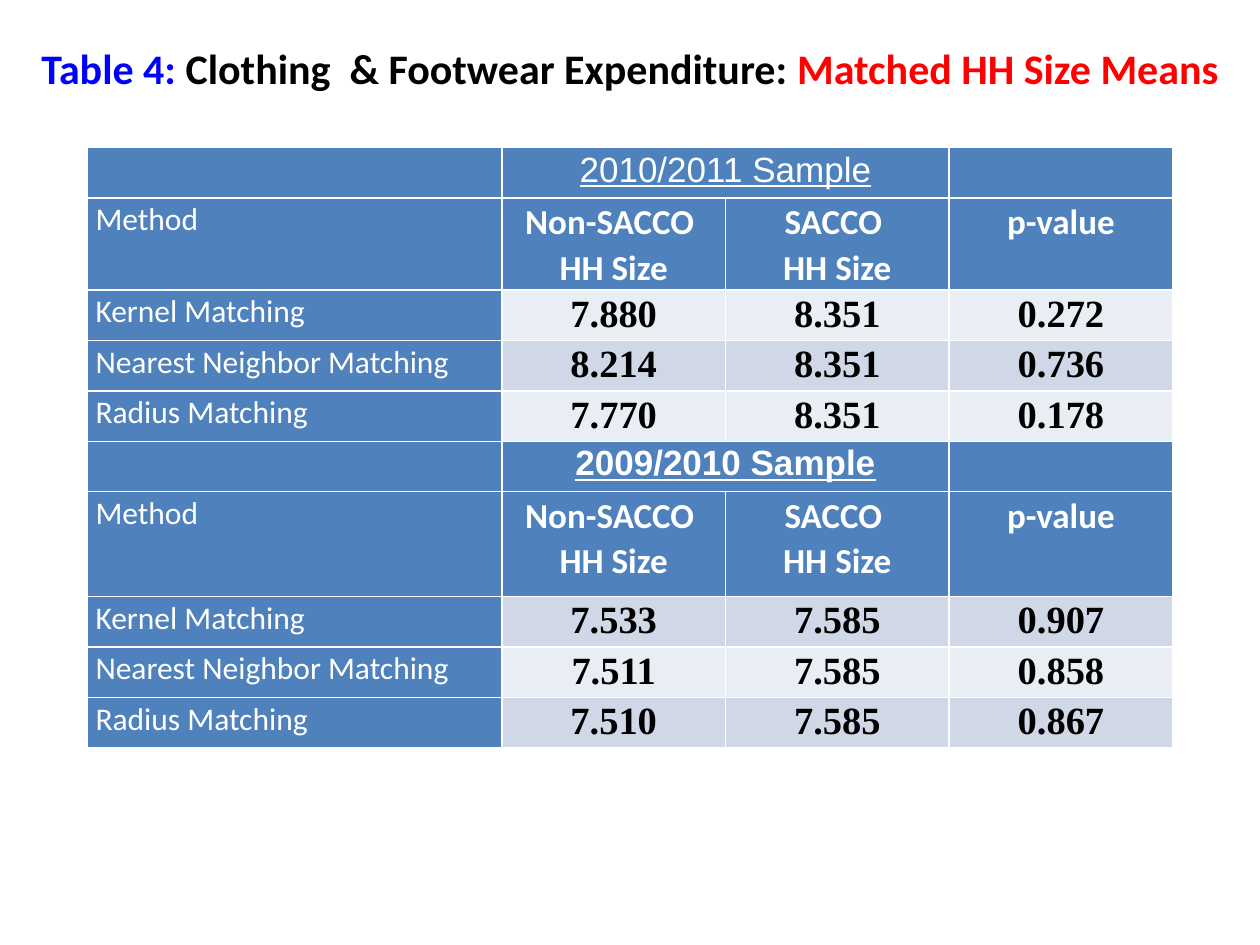
from lxml import etree
from pptx import Presentation
from pptx import util as u
from pptx.dml.color import RGBColor
from pptx.enum import text
from pptx.oxml import ns

BLUE = RGBColor(0x00, 0x00, 0xFF)
RED = RGBColor(0xFF, 0x00, 0x00)
BLACK = RGBColor(0x00, 0x00, 0x00)
WHITE = RGBColor(0xFF, 0xFF, 0xFF)
HEADER = RGBColor(0x4F, 0x81, 0xBD)
BANDS = (RGBColor(0xE9, 0xED, 0xF4), RGBColor(0xD0, 0xD8, 0xE8))

METHODS = ("Kernel Matching", "Nearest Neighbor Matching", "Radius Matching")
HEADINGS = ("Method", "Non-SACCO \nHH Size", "SACCO \nHH Size", "p-value")
SAMPLES = (
    ("2010/2011 Sample", False, 52.6,
     (("7.880", "8.351", "0.272"), ("8.214", "8.351", "0.736"), ("7.770", "8.351", "0.178"))),
    ("2009/2010 Sample", True, 60,
     (("7.533", "7.585", "0.907"), ("7.511", "7.585", "0.858"), ("7.510", "7.585", "0.867"))),
)
COLUMN_WIDTHS = (237.2, 127.8, 127.8, 127.8)
ROW_HEIGHT = 28.8


def format_span(span, size, color, bold, name="Calibri", underline=False):
    font = span.font
    font.size, font.name = u.Pt(size), name
    font.bold, font.underline = bold, underline
    font.color.rgb = color


def place_title(title, left, top, width, height):
    title.left, title.top = u.Pt(left), u.Pt(top)
    title.width, title.height = u.Pt(width), u.Pt(height)
    frame = title.text_frame
    frame.vertical_anchor = text.MSO_ANCHOR.MIDDLE
    para = frame.paragraphs[0]
    para.alignment = text.PP_ALIGN.CENTER
    for words, color in (("Table 4:", BLUE),
                         (" Clothing  & Footwear Expenditure: ", BLACK),
                         ("Matched HH Size Means", RED)):
        span = para.add_run()
        span.text = words
        format_span(span, 24, color, True)


def style_cell(cell, fill):
    cell.fill.solid()
    cell.fill.fore_color.rgb = fill
    cell.margin_left = cell.margin_right = u.Pt(5)
    cell.margin_top = cell.margin_bottom = 0
    properties = cell._tc.get_or_add_tcPr()
    for index, side in enumerate(("lnL", "lnR", "lnT", "lnB")):
        line = etree.Element(ns.qn(f"a:{side}"), w=str(u.Pt(1)))
        solid = etree.SubElement(line, ns.qn("a:solidFill"))
        etree.SubElement(solid, ns.qn("a:srgbClr"), val=str(WHITE))
        properties.insert(index, line)


def write_cell(cell, words, size, color, bold, centered=True, **font):
    cell.text_frame.text = words
    for para in cell.text_frame.paragraphs:
        para.line_spacing = 1.07
        para.alignment = text.PP_ALIGN.CENTER if centered else text.PP_ALIGN.LEFT
        for span in para.runs:
            format_span(span, size, color, bold, **font)


def fill_sample(table, first, sample):
    name, bold, heading_height, values = sample
    table.rows[first + 1].height = u.Pt(heading_height)
    for column in range(len(HEADINGS)):
        for row in range(first, first + 2 + len(METHODS)):
            is_header = column == 0 or row < first + 2
            style_cell(table.cell(row, column), HEADER if is_header else BANDS[row % 2])
    sample_cell = table.cell(first, 1)
    sample_cell.merge(table.cell(first, 2))
    write_cell(sample_cell, name, 20, WHITE, bold, name="Arial", underline=True)
    for column, heading in enumerate(HEADINGS):
        is_value = column > 0
        write_cell(table.cell(first + 1, column), heading, 20 if is_value else 18,
                   WHITE, is_value, centered=is_value)
    for row, (method, numbers) in enumerate(zip(METHODS, values), first + 2):
        write_cell(table.cell(row, 0), method, 18, WHITE, False, centered=False)
        for column, number in enumerate(numbers, 1):
            write_cell(table.cell(row, column), number, 22, BLACK, True,
                       name="Times New Roman")


def place_table(page, left, top):
    block = len(METHODS) + 2
    count = block * len(SAMPLES)
    table = page.shapes.add_table(count, len(COLUMN_WIDTHS), u.Pt(left), u.Pt(top),
                                  u.Pt(sum(COLUMN_WIDTHS)),
                                  u.Pt(ROW_HEIGHT * count)).table
    table.first_row = table.horz_banding = False
    for column, width in zip(table.columns, COLUMN_WIDTHS):
        column.width = u.Pt(width)
    for row in table.rows:
        row.height = u.Pt(ROW_HEIGHT)
    for index, sample in enumerate(SAMPLES):
        fill_sample(table, index * block, sample)


def main():
    deck = Presentation()
    deck.slide_width, deck.slide_height = u.Pt(720), u.Pt(540)
    page = deck.slides.add_slide(deck.slide_layouts[5])
    place_title(page.shapes.title, 0, 0, 720, 77)
    place_table(page, 49.6, 84.4)
    deck.save("out.pptx")


if __name__ == "__main__":
    main()
